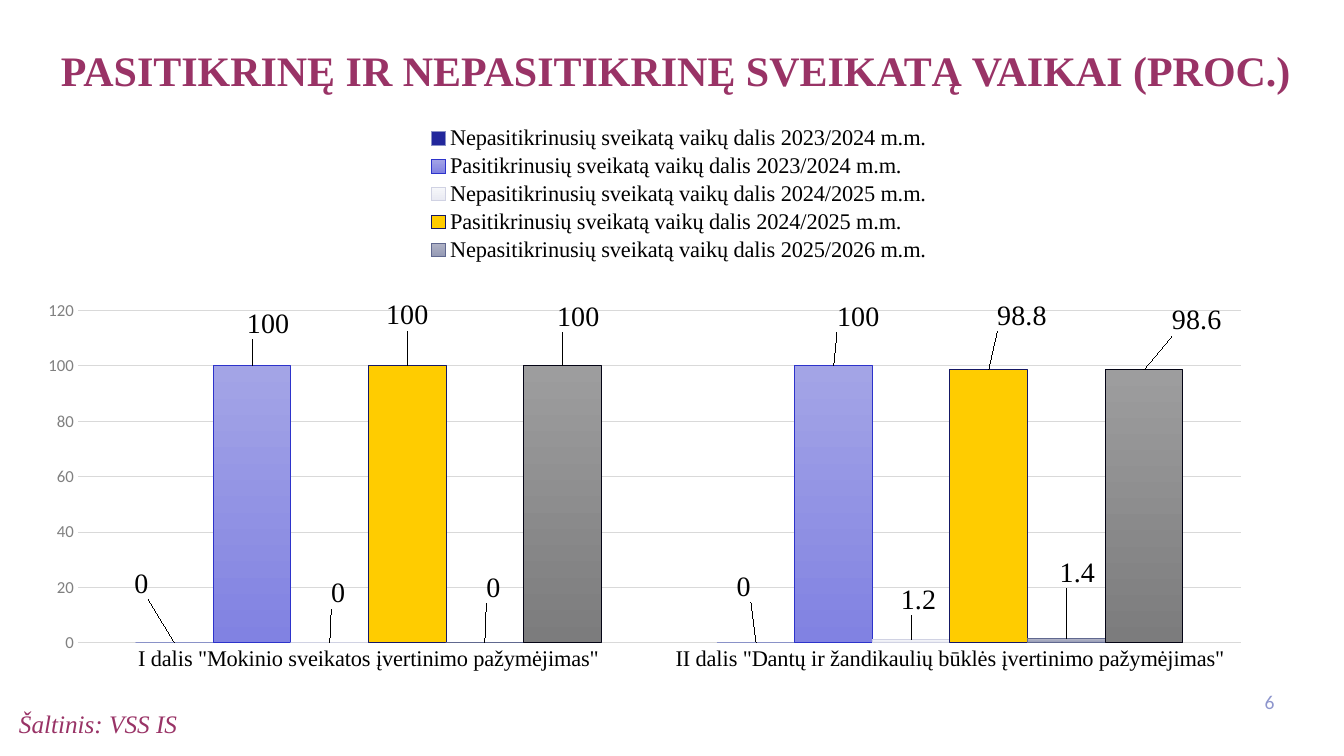
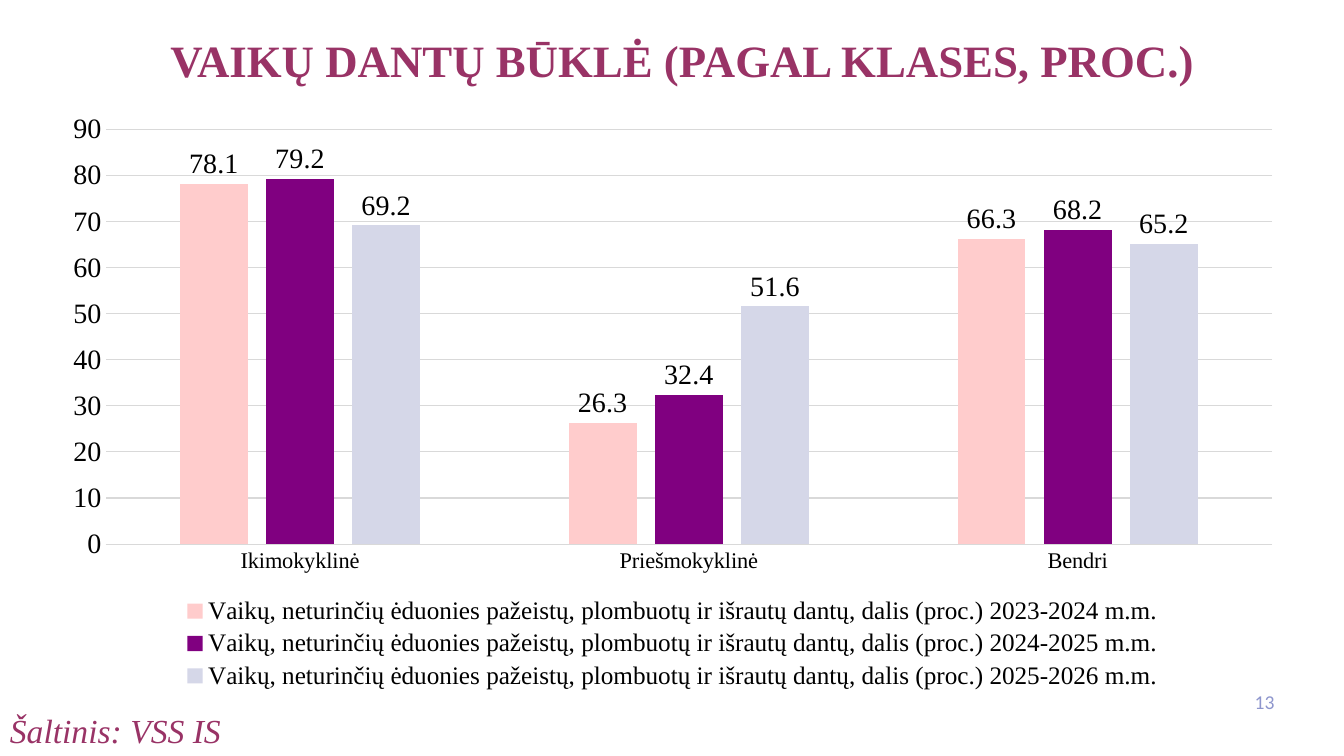
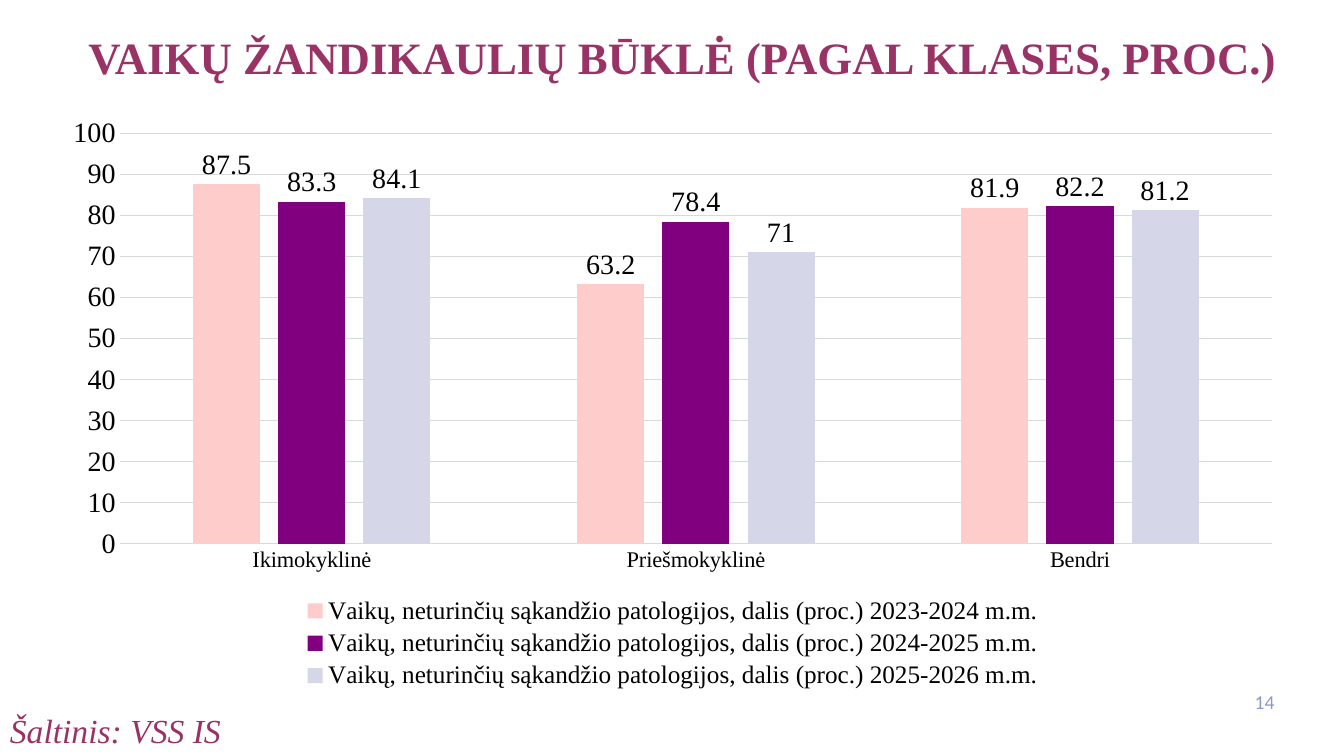
from pptx import Presentation
from pptx.chart.data import CategoryChartData
from pptx.dml.color import RGBColor
from pptx.enum import chart as chart_enum, text as text_enum
from pptx.oxml import parse_xml
from pptx.oxml.ns import nsdecls, qn
from pptx.util import Pt

COLORS = {
    "plum": "993366", "number": "8E96CD", "black": "000000", "gray": "808080", "grid": "D9D9D9",
    "pink": "FFCCCC", "purple": "800080", "lavender": "D5D7E8",
}
SERIF, SANS = "Times New Roman", "Calibri"

# Each series: name, values, fill (one colour or top and bottom), line, label shift per point
CHECKUPS = [
    ("Nepasitikrinusių sveikatą vaikų dalis 2023/2024 m.m.", (0, 0),
     ["22279C"], "8A92C8", [(-24, -28), (-9, -26)]),
    ("Pasitikrinusių sveikatą vaikų dalis 2023/2024 m.m.", (100, 100),
     ["A3A4E6", "8182E2"], "2D33CB", [(11, -16), (18, -21)]),
    ("Nepasitikrinusių sveikatą vaikų dalis 2024/2025 m.m.", (0, 1.2),
     ["F6F7FA", "E9EAF3"], "D0D2E3", [(6, -21), (5, -14)]),
    ("Pasitikrinusių sveikatą vaikų dalis 2024/2025 m.m.", (100, 98.8),
     ["FFCC00"], "151865", [(0, -22), (24, -24)]),
    ("Nepasitikrinusių sveikatą vaikų dalis 2025/2026 m.m.", (0, 1.4),
     ["B0B3C6", "9499B4"], "60688F", [(6, -25), (8, -33)]),
    ("Pasitikrinusių sveikatą vaikų dalis 2025/2026 m.m.", (100, 98.6),
     ["9D9D9E", "7C7C7D"], "040415", [(11, -21), (38, -21)]),
]


def yearly_series(measure, values_by_year):
    years = ("2023-2024", "2024-2025", "2025-2026")
    fills = ("pink", "purple", "lavender")
    return [(f"{measure}, dalis (proc.) {year} m.m.", values, [COLORS[fill]], None, [])
            for year, values, fill in zip(years, values_by_year, fills)]


BY_CLASS = {
    "categories": ["Ikimokyklinė", "Priešmokyklinė", "Bendri"],
    "gap": 219, "overlap": -27, "step": 10, "value_font": (20, "black", SERIF),
    "category_line": "grid", "legend_size": 18, "legend_side": "BOTTOM",
    "title_size": 32, "title_spacing": 1, "source_box": (0, 503.5, 480, 36), "source_size": 24,
}
SLIDES = [
    {
        "title": "PASITIKRINĘ IR NEPASITIKRINĘ SVEIKATĄ VAIKAI (PROC.)",
        "title_box": (-3, 32.5, 972, 99), "title_size": 30, "title_spacing": 0.9,
        "source_box": (6.5, 502.5, 454, 27), "source_size": 18, "number": "6",
        "chart_box": (23, 88, 880, 442),
        "categories": ['I dalis "Mokinio sveikatos įvertinimo pažymėjimas"',
                       'II dalis "Dantų ir žandikaulių būklės įvertinimo pažymėjimas"'],
        "series": CHECKUPS, "gap": 150, "overlap": 0, "maximum": 120, "step": 20,
        "value_font": (12, "gray", SANS), "category_line": None,
        "legend_size": 16, "legend_side": "TOP",
        "plot_layout": (0.037, 0.303, 0.944, 0.537),
        "legend_layout": (0.32, 0, 0.41, 0.23), "unlisted_series": 5,
    },
    {
        **BY_CLASS,
        "title": "VAIKŲ DANTŲ BŪKLĖ (PAGAL KLASES, PROC.)",
        "title_box": (6.5, 20, 962, 46), "number": "13",
        "chart_box": (34.5, 72.75, 892, 423.5), "maximum": 90,
        "series": yearly_series(
            "Vaikų, neturinčių ėduonies pažeistų, plombuotų ir išrautų dantų",
            [(78.1, 26.3, 66.3), (79.2, 32.4, 68.2), (69.2, 51.6, 65.2)]),
    },
    {
        **BY_CLASS,
        "title": "VAIKŲ ŽANDIKAULIŲ BŪKLĖ (PAGAL KLASES, PROC.)",
        "title_box": (6.5, 17.25, 962, 46), "number": "14",
        "chart_box": (34.5, 75.5, 892, 420.5), "maximum": 100,
        "series": yearly_series(
            "Vaikų, neturinčių sąkandžio patologijos",
            [(87.5, 63.2, 81.9), (83.3, 78.4, 82.2), (84.1, 71, 81.2)]),
    },
]


def rgb(value):
    return RGBColor.from_string(COLORS.get(value, value))


def style_font(font, size, color="black", name=SERIF, bold=False, italic=False):
    font.size, font.name, font.bold, font.italic = Pt(size), name, bold, italic
    font.color.rgb = rgb(color)


def style_line(line, color):
    if color is None:
        line.fill.background()
    else:
        line.color.rgb = rgb(color)
        line.width = Pt(0.75)


def write(shape, box, content, align, spacing=1, **font):
    shape.left, shape.top, shape.width, shape.height = map(Pt, box)
    frame = shape.text_frame
    frame.word_wrap = True
    frame.auto_size = text_enum.MSO_AUTO_SIZE.NONE
    frame.vertical_anchor = text_enum.MSO_ANCHOR.TOP
    paragraph = frame.paragraphs[0]
    paragraph.alignment, paragraph.line_spacing = align, spacing
    run = paragraph.add_run()
    run.text = content
    style_font(run.font, **font)


def set_layout(element, index, **values):
    """Give a chart part a manual layout, as its child number index."""
    for old in element.findall(qn("c:layout")):
        element.remove(old)
    parts = "".join(f'<c:{key} val="{value}"/>' for key, value in values.items())
    element.insert(index, parse_xml(
        f'<c:layout {nsdecls("c")}><c:manualLayout>{parts}</c:manualLayout></c:layout>'))


def box_layout(box):
    return dict(xMode="edge", yMode="edge", **dict(zip("xywh", box)))


def style_series(series, fills, line, shifts, chart_size):
    fill = series.format.fill
    if len(fills) == 1:
        fill.solid()
        fill.fore_color.rgb = rgb(fills[0])
    else:
        fill.gradient()
        fill.gradient_angle = 270
        for stop, color in zip(fill.gradient_stops, fills):
            stop.color.rgb = rgb(color)
    style_line(series.format.line, line)
    series.invert_if_negative = False

    labels = series.data_labels
    labels.show_value = True
    labels.position = chart_enum.XL_LABEL_POSITION.OUTSIDE_END
    style_font(labels.font, 20)
    for index, shift in enumerate(shifts):
        label = series.points[index].data_label
        style_font(label.font, 20)
        label.position = chart_enum.XL_LABEL_POSITION.OUTSIDE_END
        element = series._element.xpath(f"c:dLbls/c:dLbl[c:idx/@val='{index}']")[0]
        x, y = (round(move / size, 3) for move, size in zip(shift, chart_size))
        set_layout(element, 1, x=x, y=y)


def style_axes(chart, data):
    value_axis, category_axis = chart.value_axis, chart.category_axis
    value_axis.minimum_scale, value_axis.maximum_scale = 0, data["maximum"]
    value_axis.major_unit = data["step"]
    value_axis.has_major_gridlines = True
    style_line(value_axis.major_gridlines.format.line, "grid")
    style_font(value_axis.tick_labels.font, *data["value_font"])
    style_font(category_axis.tick_labels.font, 16)
    for axis, line in ((value_axis, None), (category_axis, data["category_line"])):
        axis.major_tick_mark = axis.minor_tick_mark = chart_enum.XL_TICK_MARK.NONE
        style_line(axis.format.line, line)


def style_legend(chart, data):
    chart.has_legend = True
    legend = chart.legend
    legend.position = chart_enum.XL_LEGEND_POSITION[data["legend_side"]]
    legend.include_in_layout = False
    style_font(legend.font, data["legend_size"])
    if "legend_layout" in data:
        set_layout(legend._element, 1, **box_layout(data["legend_layout"]))
        legend._element.insert(1, parse_xml(
            f'<c:legendEntry {nsdecls("c")}><c:idx val="{data["unlisted_series"]}"/>'
            '<c:delete val="1"/></c:legendEntry>'))


def add_column_chart(slide, data):
    chart_data = CategoryChartData()
    chart_data.categories = data["categories"]
    for name, values, *_ in data["series"]:
        chart_data.add_series(name, values)
    chart = slide.shapes.add_chart(
        chart_enum.XL_CHART_TYPE.COLUMN_CLUSTERED, *map(Pt, data["chart_box"]), chart_data).chart
    chart.has_title = False
    style_font(chart.font, 10, name=SANS)
    plot = chart.plots[0]
    plot.vary_by_categories = False
    plot.gap_width, plot.overlap = data["gap"], data["overlap"]
    for series, (_, _, fills, line, shifts) in zip(plot.series, data["series"]):
        style_series(series, fills, line, shifts, data["chart_box"][2:])
    style_axes(chart, data)
    style_legend(chart, data)
    if "plot_layout" in data:
        plot_area = chart._chartSpace.xpath("c:chart/c:plotArea")[0]
        set_layout(plot_area, 0, layoutTarget="inner", **box_layout(data["plot_layout"]))


def add_slide(presentation, data):
    align = text_enum.PP_ALIGN
    slide = presentation.slides.add_slide(presentation.slide_layouts[5])
    write(slide.shapes.title, data["title_box"], data["title"], align.CENTER,
          data["title_spacing"], size=data["title_size"], color="plum", bold=True)
    add_column_chart(slide, data)
    source, number = (slide.shapes.add_textbox(0, 0, 0, 0) for _ in range(2))
    write(source, data["source_box"], "Šaltinis: VSS IS", align.LEFT,
          size=data["source_size"], color="plum", italic=True)
    write(number, (880, 489, 37.5, 29), data["number"], align.RIGHT,
          size=14, color="number", name=SANS)


def main():
    presentation = Presentation()
    presentation.slide_width, presentation.slide_height = Pt(960), Pt(540)
    for data in SLIDES:
        add_slide(presentation, data)
    presentation.save("out.pptx")


if __name__ == "__main__":
    main()
